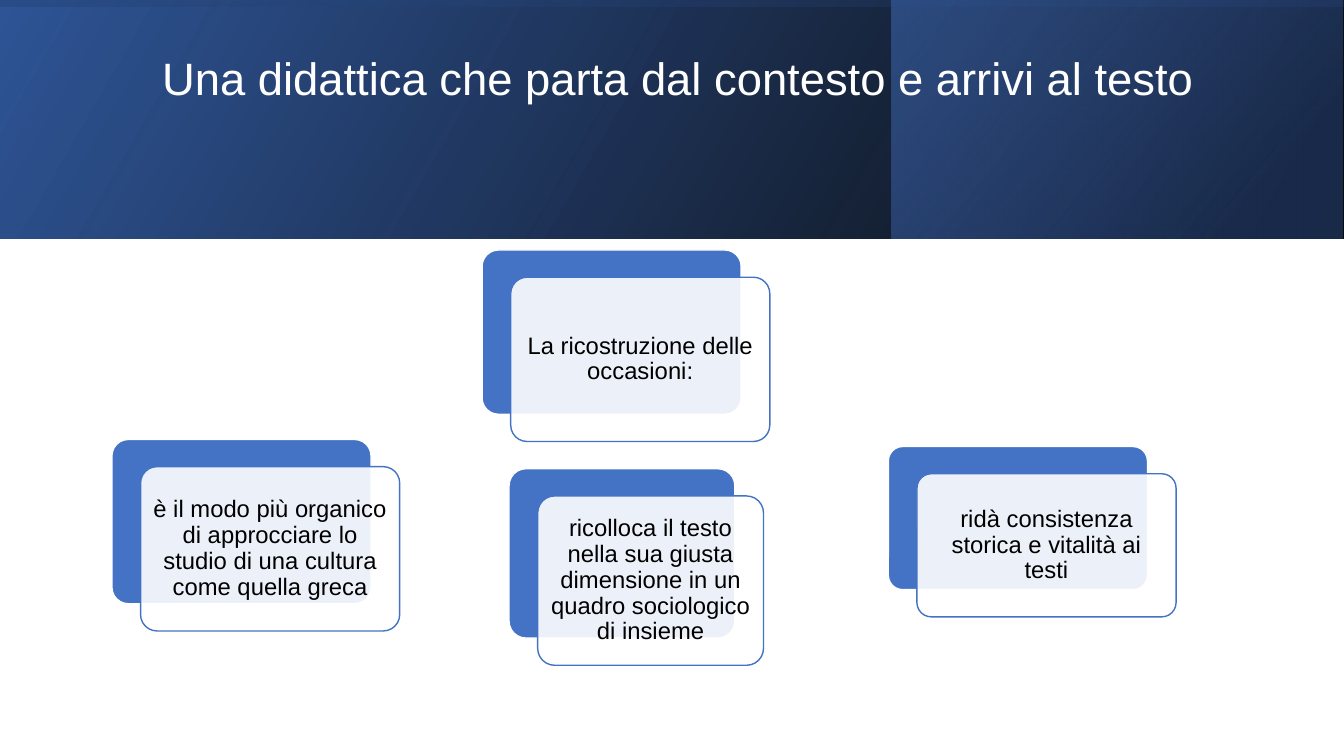
from lxml import etree
from pptx import Presentation, util as u
from pptx.dml.color import RGBColor
from pptx.enum import shapes, text
from pptx.oxml.ns import qn

WIDTH, HEIGHT = 13.33, 7.5
BLUE, WHITE, BLACK = "4472C4", "FFFFFF", "000000"


def colour(value):
    return RGBColor.from_string(value)


def apply(target, formats):
    for name, value in formats.items():
        setattr(target, name, value)


def set_alpha(colour_element, percent):
    etree.SubElement(colour_element, qn("a:alpha"), val=str(percent * 1000))


class SlideBuilder:
    font_name = "Arial"
    card_shift = (2.13, 3.6)
    card_radius = 0.1

    def __init__(self, presentation):
        self.slide = presentation.slides.add_slide(presentation.slide_layouts[6])

    def box(self, left, top, width, height):
        shares = ((left, WIDTH), (top, HEIGHT), (width, WIDTH), (height, HEIGHT))
        return [u.Inches(share / 100 * size) for share, size in shares]

    def shape(self, kind, area):
        shape = self.slide.shapes.add_shape(kind, *self.box(*area))
        shape.shadow.inherit = False
        return shape

    def gradient_band(self, area, stops, angle, rotation=0):
        shape = self.shape(shapes.MSO_SHAPE.RECTANGLE, area)
        shape.rotation = rotation
        shape.line.fill.background()
        shape.fill.gradient()
        shape.fill.gradient_angle = angle
        for stop, (position, value, alpha) in zip(shape.fill.gradient_stops, stops):
            stop.position = position / 100
            stop.color.rgb = colour(value)
        elements = shape.element.spPr.iter(qn("a:srgbClr"))
        for element, (position, value, alpha) in zip(list(elements), stops):
            set_alpha(element, alpha)
        shape.element.spPr.find(qn("a:xfrm")).set("flipH", "1")

    def fill_text(self, shape, wording, frame_formats, size, value, alignment):
        frame = shape.text_frame
        apply(frame, {"word_wrap": True, **frame_formats})
        paragraph = frame.paragraphs[0]
        apply(paragraph, {"alignment": alignment, "line_spacing": 0.9})
        run = paragraph.add_run()
        run.text = wording
        apply(run.font, {"name": self.font_name, "size": u.Pt(size)})
        run.font.color.rgb = colour(value)

    def title(self, area, wording):
        shape = self.slide.shapes.add_textbox(*self.box(*area))
        formats = {"vertical_anchor": text.MSO_ANCHOR.TOP, "margin_top": u.Inches(0.18)}
        self.fill_text(shape, wording, formats, 32.4, WHITE, text.PP_ALIGN.LEFT)

    def panel(self, area, fill, line):
        shape = self.shape(shapes.MSO_SHAPE.ROUNDED_RECTANGLE, area)
        shape.adjustments[0] = self.card_radius
        shape.fill.solid()
        shape.fill.fore_color.rgb = colour(fill)
        shape.line.color.rgb = colour(line)
        shape.line.width = u.Pt(1)
        return shape

    def card(self, area, wording):
        left, top, width, height = area
        right_shift, down_shift = self.card_shift
        self.panel(area, BLUE, WHITE)
        front = self.panel((left + right_shift, top + down_shift, width, height), WHITE, BLUE)
        set_alpha(front.element.spPr.find(qn("a:solidFill"))[0], 90)
        formats = {f"margin_{side}": u.Inches(0.07) for side in ("left", "top", "right", "bottom")}
        formats["vertical_anchor"] = text.MSO_ANCHOR.MIDDLE
        self.fill_text(front, wording, formats, 17, BLACK, text.PP_ALIGN.CENTER)


def main():
    presentation = Presentation()
    apply(presentation, {"slide_width": u.Inches(WIDTH), "slide_height": u.Inches(HEIGHT)})
    builder = SlideBuilder(presentation)

    builder.gradient_band((0, 0, 100, 31.6), [(0, BLACK, 96), (100, "2F5597", 100)], 30)
    builder.gradient_band((66.3, 0, 33.62, 31.6), [(19, "203864", 68), (100, BLUE, 48)], 40)
    builder.gradient_band((41.1, -73.07, 17.78, 177.73),
                          [(23, "2F5597", 16), (99, BLACK, 45)], 10, rotation=270)
    builder.title((11.33, 5.07, 79.74, 22.93),
                  "Una didattica che parta dal contesto e arrivi al testo")

    cards = [
        ((8.33, 58.13, 19.28, 21.73),
         "è il modo più organico di approcciare lo studio di una cultura come quella greca"),
        ((37.88, 62, 16.8, 22.4),
         "ricolloca il testo nella sua giusta dimensione in un quadro sociologico di insieme"),
        ((66.1, 59.07, 19.28, 18.93), "ridà consistenza storica e vitalità ai testi"),
        ((35.87, 33.07, 19.28, 21.73), "La ricostruzione delle occasioni:"),
    ]
    for area, wording in cards:
        builder.card(area, wording)

    presentation.save("out.pptx")


if __name__ == "__main__":
    main()
